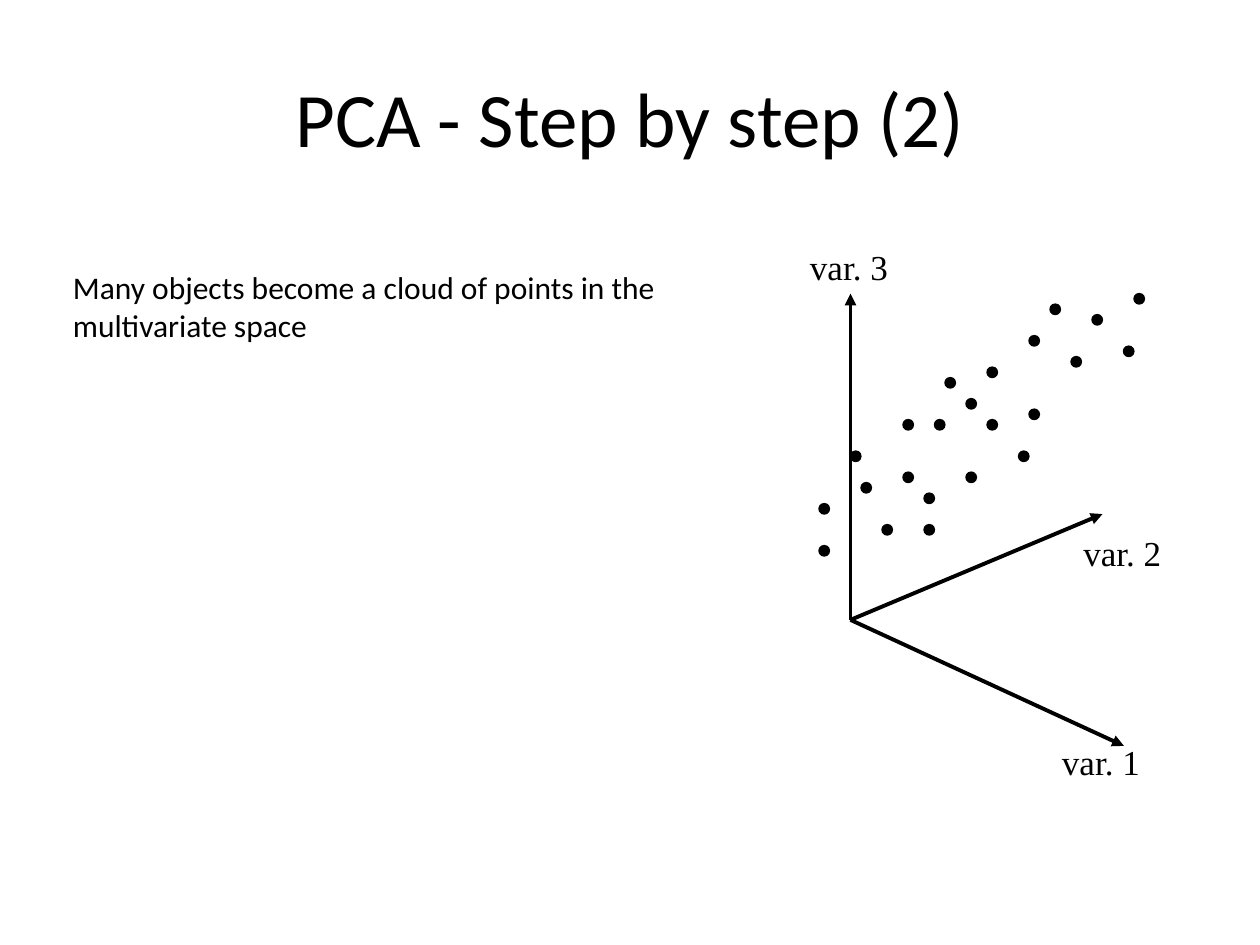
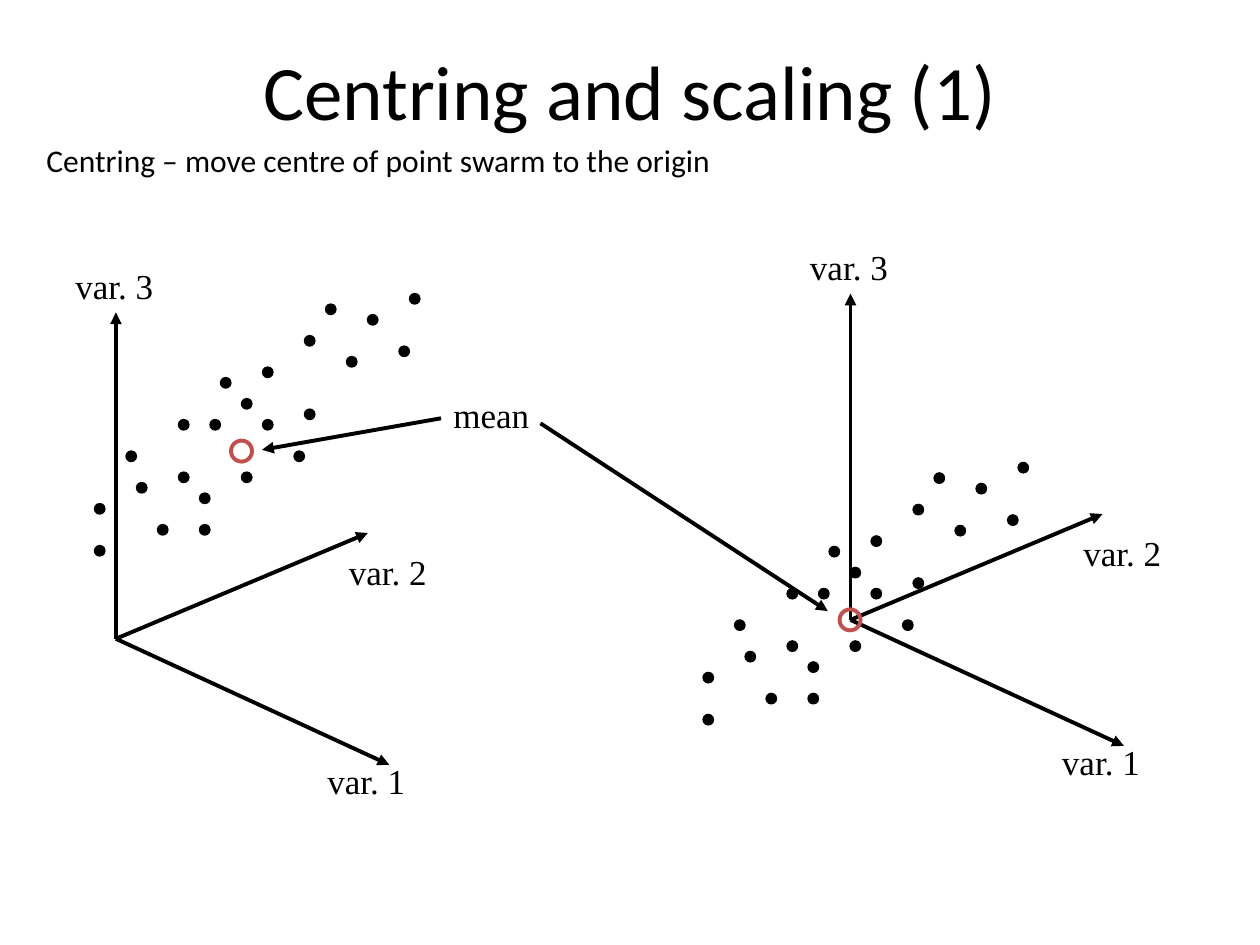
from lxml import etree
from pptx import Presentation
from pptx.dml.color import RGBColor
from pptx.enum.shapes import MSO_CONNECTOR, MSO_SHAPE
from pptx.enum.text import MSO_ANCHOR, MSO_AUTO_SIZE, PP_ALIGN
from pptx.oxml.ns import qn
from pptx.util import Inches, Pt

STRAIGHT = MSO_CONNECTOR.STRAIGHT
OVAL = MSO_SHAPE.OVAL
MIDDLE = MSO_ANCHOR.MIDDLE
GROW = MSO_AUTO_SIZE.SHAPE_TO_FIT_TEXT
LEFT, CENTER = PP_ALIGN.LEFT, PP_ALIGN.CENTER

BLACK, RED = "000000", "C0504D"
SANS, SERIF = "Calibri", "Times New Roman"
GRID = 1 / 12

POINTS = [(6, 22), (3, 15), (0, 20), (10, 19), (0, 24), (4, 18), (8, 17), (11, 12),
          (14, 17), (16, 7), (12, 8), (14, 10), (16, 12), (24, 6), (20, 11), (20, 4),
          (26, 2), (29, 5), (30, 0), (10, 22), (19, 15), (22, 1), (8, 12)]
MEAN = (13, 14)

AXES = [("var. 3", (0, -2.59), (-0.42, -3.02)),
        ("var. 2", (2, -0.84), (1.75, -0.75)),
        ("var. 1", (2.17, 1), (1.58, 0.91))]


def color(value):
    return RGBColor.from_string(value)


class Deck:
    def __init__(self):
        self.prs = Presentation()
        self.prs.slide_width, self.prs.slide_height = Inches(10), Inches(7.5)
        self.s = None

    def slide(self, title, top):
        self.s = self.prs.slides.add_slide(self.prs.slide_layouts[5])
        sp = self.s.shapes.title
        sp.left, sp.top, sp.width, sp.height = (Inches(v) for v in (0.5, top, 9, 1.25))
        sp.text_frame.vertical_anchor = MIDDLE
        self.add_run(sp.text_frame, title, 44, SANS, CENTER)

    def add_run(self, tf, text, size, font, align=LEFT):
        p = tf.paragraphs[0]
        p.alignment = align
        r = p.add_run()
        r.text = text
        r.font.size, r.font.name = Pt(size), font
        r.font.color.rgb = color(BLACK)

    def text(self, text, x, y, w, h, size=18, font=SANS, wrap=True):
        sp = self.s.shapes.add_textbox(Inches(x), Inches(y), Inches(w), Inches(h))
        tf = sp.text_frame
        tf.word_wrap, tf.auto_size = wrap, GROW
        self.add_run(tf, text, size, font)

    def label(self, text, x, y, w=0.88):
        self.text(text, x, y, w, 0.43, 20, SERIF, wrap=False)

    def arrow(self, x1, y1, x2, y2):
        c = self.s.shapes.add_connector(STRAIGHT, Inches(x1), Inches(y1), Inches(x2), Inches(y2))
        c.line.color.rgb, c.line.width = color(BLACK), Pt(2.25)
        sp_pr = c._element.spPr
        etree.SubElement(sp_pr.find(qn("a:ln")), qn("a:tailEnd"), type="triangle")
        etree.SubElement(sp_pr, qn("a:effectLst"))

    def axes(self, x, y):
        for _, (dx, dy), _ in AXES:
            self.arrow(x, y, x + dx, y + dy)
        for name, _, (dx, dy) in reversed(AXES):
            self.label(name, x + dx, y + dy)

    def circle(self, shapes, x, y, size, line, width, fill=None):
        sp = shapes.add_shape(OVAL, Inches(x), Inches(y), Inches(size), Inches(size))
        sp.shadow.inherit = False
        sp.line.color.rgb, sp.line.width = color(line), Pt(width)
        if fill:
            sp.fill.solid()
            sp.fill.fore_color.rgb = color(fill)
        else:
            sp.fill.background()

    def cloud(self, x, y, mean=True):
        shapes = self.s.shapes.add_group_shape().shapes
        for col, row in POINTS:
            self.circle(shapes, x + col * GRID, y + row * GRID, GRID, BLACK, 0.75, BLACK)
        if mean:
            col, row = MEAN
            self.circle(shapes, x + col * GRID, y + row * GRID, 2 * GRID, RED, 2.25)


def main():
    deck = Deck()

    deck.slide("PCA - Step by step (2)", 0.3)
    deck.axes(6.75, 4.92)
    deck.cloud(6.5, 2.33, mean=False)
    deck.text("Many objects become a cloud of points in the multivariate space",
              0.48, 2.08, 5.02, 1.5)

    deck.slide("Centring and scaling (1)", 0.09)
    deck.axes(0.92, 5.07)
    deck.arrow(3.5, 3.32, 2.08, 3.57)
    deck.label("mean", 3.5, 3.07, 0.85)
    deck.axes(6.75, 4.92)
    deck.text("Centring – move centre of point swarm to the origin", 0.27, 1.07, 9.73, 0.57)
    deck.cloud(0.75, 2.33)
    deck.cloud(5.58, 3.67)
    deck.arrow(4.29, 3.36, 6.57, 4.85)

    deck.prs.save("out.pptx")


if __name__ == "__main__":
    main()
